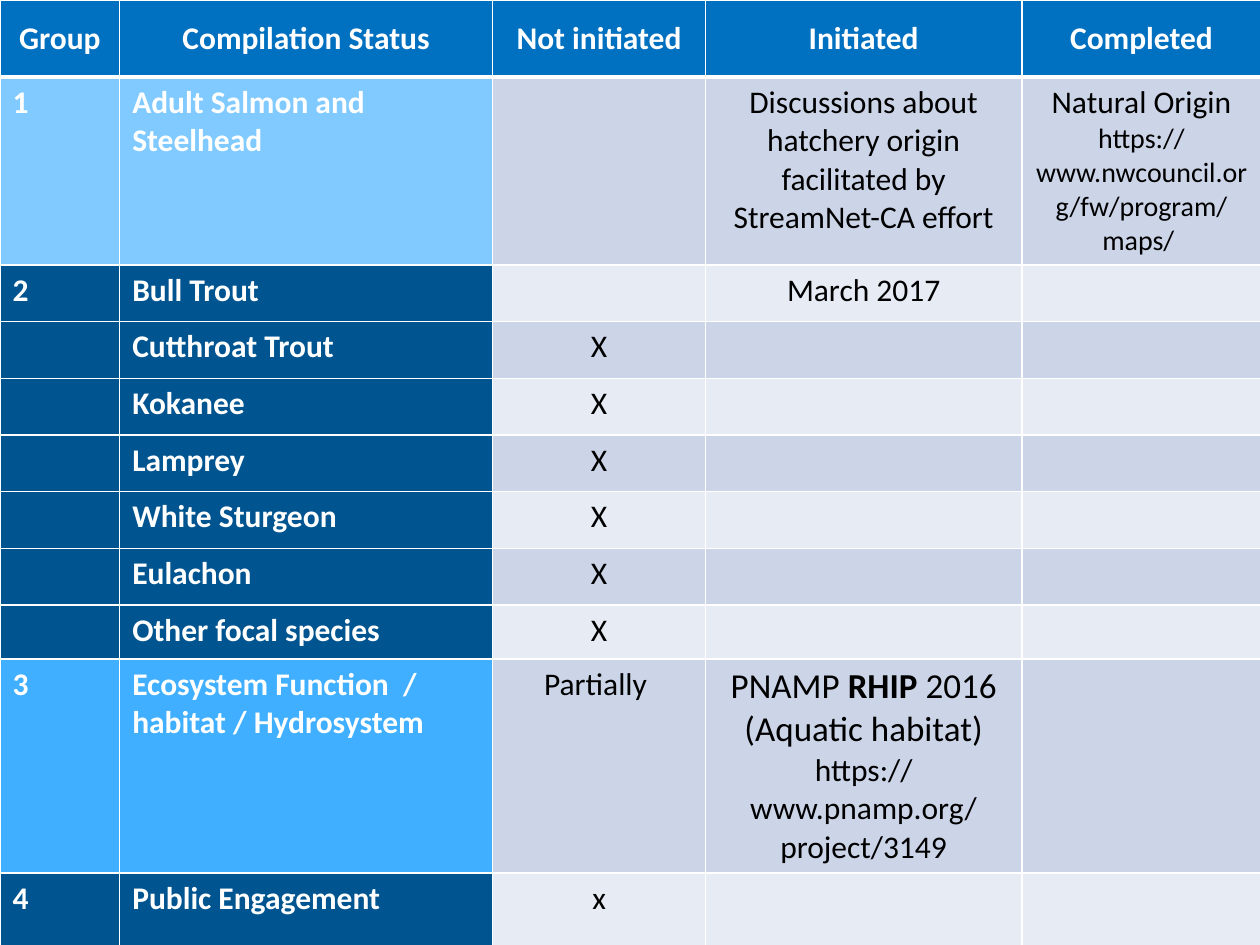
from lxml import etree
from pptx import Presentation
from pptx.dml.color import RGBColor
from pptx.enum import text
from pptx.oxml import ns
from pptx.util import Inches, Pt

WHITE = RGBColor(0xFF, 0xFF, 0xFF)
BLACK = RGBColor(0x00, 0x00, 0x00)
HEADER_BLUE = RGBColor(0x00, 0x70, 0xC0)
PALE_BLUE = RGBColor(0x80, 0xCA, 0xFF)
BRIGHT_BLUE = RGBColor(0x40, 0xAF, 0xFF)
DARK_BLUE = RGBColor(0x00, 0x54, 0x90)
BAND_DARK = RGBColor(0xCC, 0xD5, 0xE8)
BAND_LIGHT = RGBColor(0xE7, 0xEB, 0xF4)

FONT = "Calibri"
COLUMN_WIDTHS = [0.95, 2.96, 1.69, 2.51, 1.9]
ROW_HEIGHTS = [0.61, 1.07] + [0.45] * 6 + [0.43, 1.13, 0.58]
LABEL_COLUMNS = 2
GROUP_FILLS = {1: PALE_BLUE, 9: BRIGHT_BLUE}

HATCHERY = "Discussions about hatchery origin facilitated by StreamNet-CA effort"
NATURAL_ORIGIN = [
    [("Natural Origin", 18, False)],
    [("https://www.nwcouncil.org/fw/program/maps/ ", 16, False)],
]
HABITAT = [
    [("PNAMP ", 20, False), ("RHIP ", 20, True), ("2016 (Aquatic habitat)", 20, False)],
    [("https://www.pnamp.org/project/3149", 18, False)],
]
ROWS = [
    ["Group", "Compilation Status", "Not initiated", "Initiated", "Completed"],
    ["1", "Adult Salmon and Steelhead", "", HATCHERY, NATURAL_ORIGIN],
    ["2", "Bull Trout", "", "March 2017", ""],
    ["", "Cutthroat Trout", "X", "", ""],
    ["", "Kokanee", "X", "", ""],
    ["", "Lamprey", "X", "", ""],
    ["", "White Sturgeon", "X", "", ""],
    ["", "Eulachon", "X", "", ""],
    ["", "Other focal species", "X", "", ""],
    ["3", "Ecosystem Function  / habitat / Hydrosystem", "Partially ", HABITAT, ""],
    ["4", "Public Engagement", "x", "", ""],
]


def set_borders(cell, widths):
    properties = cell._tc.get_or_add_tcPr()
    for position, (side, width) in enumerate(widths.items()):
        line = etree.Element(ns.qn(f"a:ln{side}"), w=str(Pt(width)))
        solid = etree.SubElement(line, ns.qn("a:solidFill"))
        etree.SubElement(solid, ns.qn("a:srgbClr"), val=str(WHITE))
        properties.insert(position, line)


def write_cell(cell, content, color, bold, alignment):
    paragraphs = [[(content, 18, bold)]] if isinstance(content, str) else content
    for index, runs in enumerate(paragraphs):
        frame = cell.text_frame
        paragraph = frame.add_paragraph() if index else frame.paragraphs[0]
        paragraph.alignment = alignment
        paragraph.font.size = Pt(18)
        for words, size, run_bold in runs:
            if not words:
                continue
            run = paragraph.add_run()
            run.text = words
            run.font.name = FONT
            run.font.size = Pt(size)
            run.font.bold = run_bold
            run.font.color.rgb = color


def format_cell(cell, row, column, content):
    header = row == 0
    label = header or column < LABEL_COLUMNS
    if header:
        fill = HEADER_BLUE
        cell.vertical_anchor = text.MSO_ANCHOR.MIDDLE
    elif label:
        fill = GROUP_FILLS.get(row, DARK_BLUE)
    else:
        fill = BAND_DARK if row % 2 else BAND_LIGHT
    cell.fill.solid()
    cell.fill.fore_color.rgb = fill
    centred = header or not label
    alignment = text.PP_ALIGN.CENTER if centred else text.PP_ALIGN.LEFT
    write_cell(cell, content, WHITE if label else BLACK, label, alignment)
    top = 3 if row == 1 else 1
    bottom = 3 if header else 1
    set_borders(cell, {"L": 1, "R": 1, "T": top, "B": bottom})


def add_status_table(slide, left, top, width, height):
    frame = slide.shapes.add_table(
        len(ROWS), len(COLUMN_WIDTHS), left, top, width, height
    )
    table = frame.table
    for column, column_width in zip(table.columns, COLUMN_WIDTHS):
        column.width = Inches(column_width)
    for row, row_height in zip(table.rows, ROW_HEIGHTS):
        row.height = Inches(row_height)
    for row, contents in enumerate(ROWS):
        for column, content in enumerate(contents):
            format_cell(table.cell(row, column), row, column, content)


def main():
    presentation = Presentation()
    presentation.slide_width = Inches(10)
    presentation.slide_height = Inches(7.5)
    slide = presentation.slides.add_slide(presentation.slide_layouts[6])
    add_status_table(slide, Inches(0), Inches(0), Inches(10), Inches(6.96))
    presentation.save("out.pptx")


if __name__ == "__main__":
    main()
